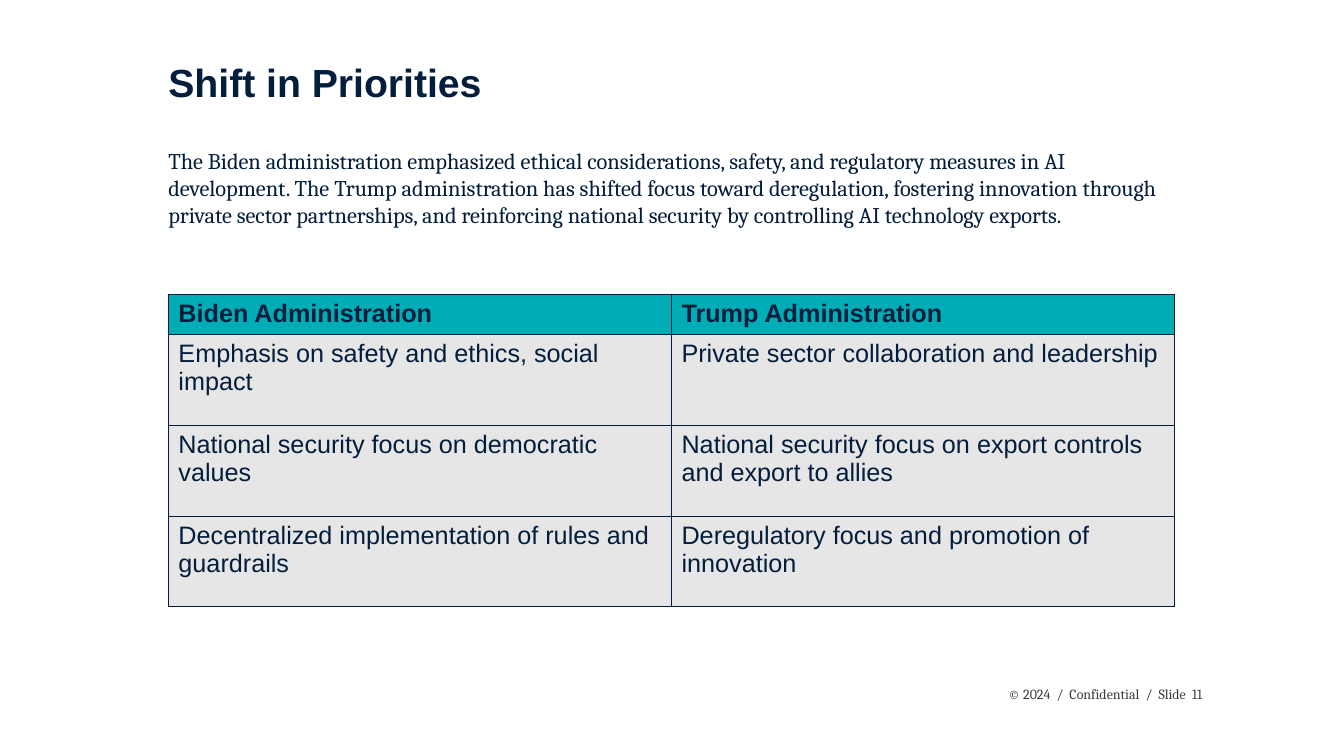
from pptx import Presentation
from pptx.dml.color import RGBColor
from pptx.enum.text import MSO_ANCHOR as Anchor
from pptx.oxml import parse_xml
from pptx.oxml.ns import nsdecls
from pptx.util import Inches, Pt

NAVY, TEAL, PALE, GREY = "031D3D", "00ACB6", "E7E6E6", "3C3C3C"
LEFT = 1.67
INTRO = (
    "The Biden administration emphasized ethical considerations, safety, and "
    "regulatory measures in AI development. The Trump administration has shifted "
    "focus toward deregulation, fostering innovation through private sector "
    "partnerships, and reinforcing national security by controlling AI technology "
    "exports."
)
PRIORITIES = [
    ("Biden Administration", "Trump Administration"),
    ("Emphasis on safety and ethics, social impact",
     "Private sector collaboration and leadership"),
    ("National security focus on democratic values",
     "National security focus on export controls and export to allies"),
    ("Decentralized implementation of rules and guardrails",
     "Deregulatory focus and promotion of innovation"),
]


def color(hex_code):
    """Turn a hex string into a colour."""
    return RGBColor.from_string(hex_code)


def style(paragraph, font_name, size, hex_code, bold=False):
    """Format every run of a paragraph."""
    for run in paragraph.runs:
        run.font.name = font_name
        run.font.size = Pt(size)
        run.font.bold = bold
        run.font.color.rgb = color(hex_code)


def add_text(slide, text, place, font_name, size, hex_code, bold=False):
    """Add a wrapped text box without margins and return its frame."""
    frame = slide.shapes.add_textbox(*map(Inches, place)).text_frame
    frame.word_wrap = True
    frame.margin_left = frame.margin_right = 0
    frame.margin_top = frame.margin_bottom = 0
    frame.text = text
    style(frame.paragraphs[0], font_name, size, hex_code, bold)
    return frame


def add_borders(cell, hex_code, width):
    """Draw a solid line on all four sides of a cell."""
    properties = cell._tc.get_or_add_tcPr()
    for position, side in enumerate(("lnL", "lnR", "lnT", "lnB")):
        properties.insert(position, parse_xml(
            f'<a:{side} {nsdecls("a")} w="{Pt(width)}"><a:solidFill>'
            f'<a:srgbClr val="{hex_code}"/></a:solidFill></a:{side}>'))


def add_priorities(slide, rows, left, top, column_width, header_height, row_height):
    """Add the table that compares the two administrations."""
    heights = [header_height] + [row_height] * (len(rows) - 1)
    columns = len(rows[0])
    table = slide.shapes.add_table(
        len(rows), columns, Inches(left), Inches(top),
        Inches(columns * column_width), Inches(sum(heights))).table
    for column in table.columns:
        column.width = Inches(column_width)
    for row_index, (row, height) in enumerate(zip(rows, heights)):
        table.rows[row_index].height = Inches(height)
        is_header = row_index == 0
        for column_index, text in enumerate(row):
            cell = table.cell(row_index, column_index)
            cell.text = text
            style(cell.text_frame.paragraphs[0], "Arial", 18, NAVY, is_header)
            cell.fill.solid()
            cell.fill.fore_color.rgb = color(TEAL if is_header else PALE)
            add_borders(cell, NAVY, 1)


def main():
    """Build the slide and save it."""
    presentation = Presentation()
    presentation.slide_width = Inches(13.33)
    presentation.slide_height = Inches(7.5)
    slide = presentation.slides.add_slide(presentation.slide_layouts[6])

    title = add_text(slide, "Shift in Priorities", (LEFT, 0.42, 9.99, 0.85),
                     "Arial", 28, NAVY, True)
    title.vertical_anchor = Anchor.MIDDLE
    title.paragraphs[0].line_spacing = 0.9
    add_text(slide, INTRO, (LEFT, 1.46, 10, 1), "Cambria", 16, NAVY)
    add_priorities(slide, PRIORITIES, LEFT, 2.92, 4.99, 0.38, 0.9)
    add_text(slide, "© 2024  /  Confidential  /  Slide  11",
             (10, 6.8, 2.77, 0.33), "Cambria", 10, GREY)

    presentation.save("out.pptx")


if __name__ == "__main__":
    main()
